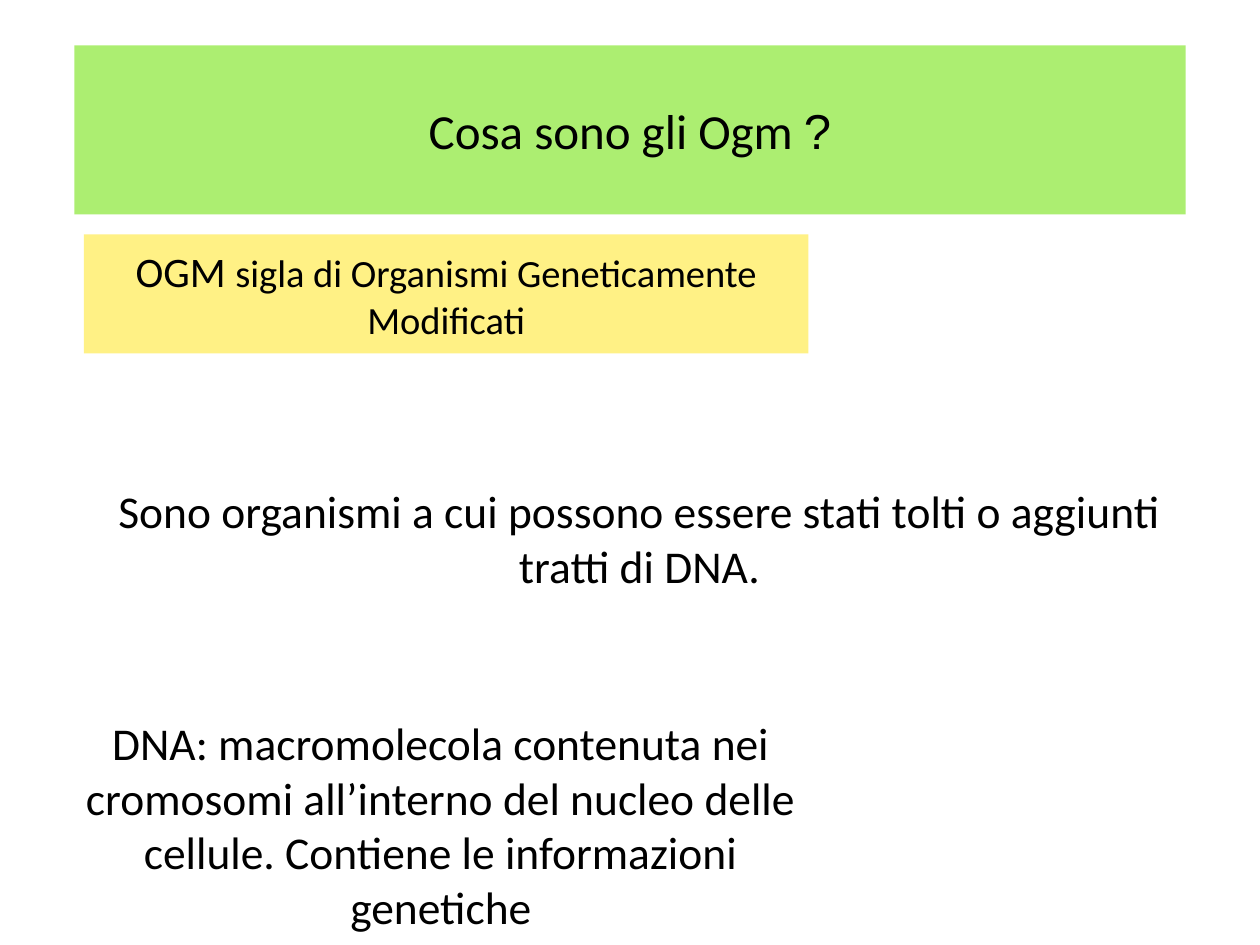
from dataclasses import dataclass

from lxml import etree
from pptx import Presentation
from pptx.dml.color import RGBColor
from pptx.enum.shapes import MSO_SHAPE
from pptx.enum.text import MSO_ANCHOR, MSO_AUTO_SIZE, PP_ALIGN
from pptx.oxml.ns import qn
from pptx.util import Pt

RECTANGLE = MSO_SHAPE.RECTANGLE
MIDDLE = MSO_ANCHOR.MIDDLE
NO_AUTOFIT = MSO_AUTO_SIZE.NONE
CENTER = PP_ALIGN.CENTER


@dataclass(frozen=True)
class Theme:
    ink: str = "000000"
    title_fill: str = "7AE41A"
    title_opacity: int = 62
    label_fill: str = "FFF185"
    font: str = "Calibri"
    mark_font: str = "Arial"
    title_size: int = 28
    acronym_size: int = 24
    label_size: int = 22
    body_size: int = 26


class SlideBuilder:
    """Draws styled elements on one slide, with lengths in points."""

    def __init__(self, prs, theme):
        self.theme = theme
        self.s = prs.slides.add_slide(prs.slide_layouts[5])

    def set_fill(self, sp, color, opacity=100):
        sp.fill.solid()
        sp.fill.fore_color.rgb = RGBColor.from_string(color)
        sp.line.fill.background()
        if opacity < 100:
            clr = sp.element.spPr.find(qn("a:solidFill"))[0]
            etree.SubElement(clr, qn("a:alpha"), val=str(opacity * 1000))

    def set_text(self, sp, runs):
        tf = sp.text_frame
        tf.word_wrap = True
        tf.auto_size = NO_AUTOFIT
        tf.vertical_anchor = MIDDLE
        p = tf.paragraphs[0]
        p.alignment = CENTER
        for text, size, font in runs:
            r = p.add_run()
            r.text = text
            r.font.size = Pt(size)
            r.font.name = font
            r.font.color.rgb = RGBColor.from_string(self.theme.ink)

    def title(self, box, runs):
        sp = self.s.shapes.title
        sp.left, sp.top, sp.width, sp.height = map(Pt, box)
        self.set_fill(sp, self.theme.title_fill, self.theme.title_opacity)
        self.set_text(sp, runs)

    def label(self, box, runs):
        sp = self.s.shapes.add_shape(RECTANGLE, *map(Pt, box))
        sp.shadow.inherit = False
        self.set_fill(sp, self.theme.label_fill)
        self.set_text(sp, runs)

    def body(self, box, text):
        sp = self.s.shapes.add_textbox(*map(Pt, box))
        self.set_text(sp, [(text, self.theme.body_size, self.theme.font)])


def main():
    prs = Presentation()
    prs.slide_width, prs.slide_height = Pt(720), Pt(540)
    t = Theme()
    b = SlideBuilder(prs, t)
    b.title((42.5, 26, 635, 96.5), [
        ("Cosa sono gli Ogm ", t.title_size, t.font),
        ("?", t.title_size, t.mark_font),
    ])
    b.label((48, 134, 414, 68), [
        ("OGM ", t.acronym_size, t.font),
        ("sigla di Organismi Geneticamente Modificati", t.label_size, t.font),
    ])
    b.body((48, 191, 635, 232.5),
           "Sono organismi a cui possono essere stati tolti o aggiunti tratti di DNA.")
    b.body((25, 428.5, 454, 85),
           "DNA: macromolecola contenuta nei cromosomi all’interno del nucleo "
           "delle cellule. Contiene le informazioni genetiche")
    prs.save("out.pptx")


if __name__ == "__main__":
    main()
